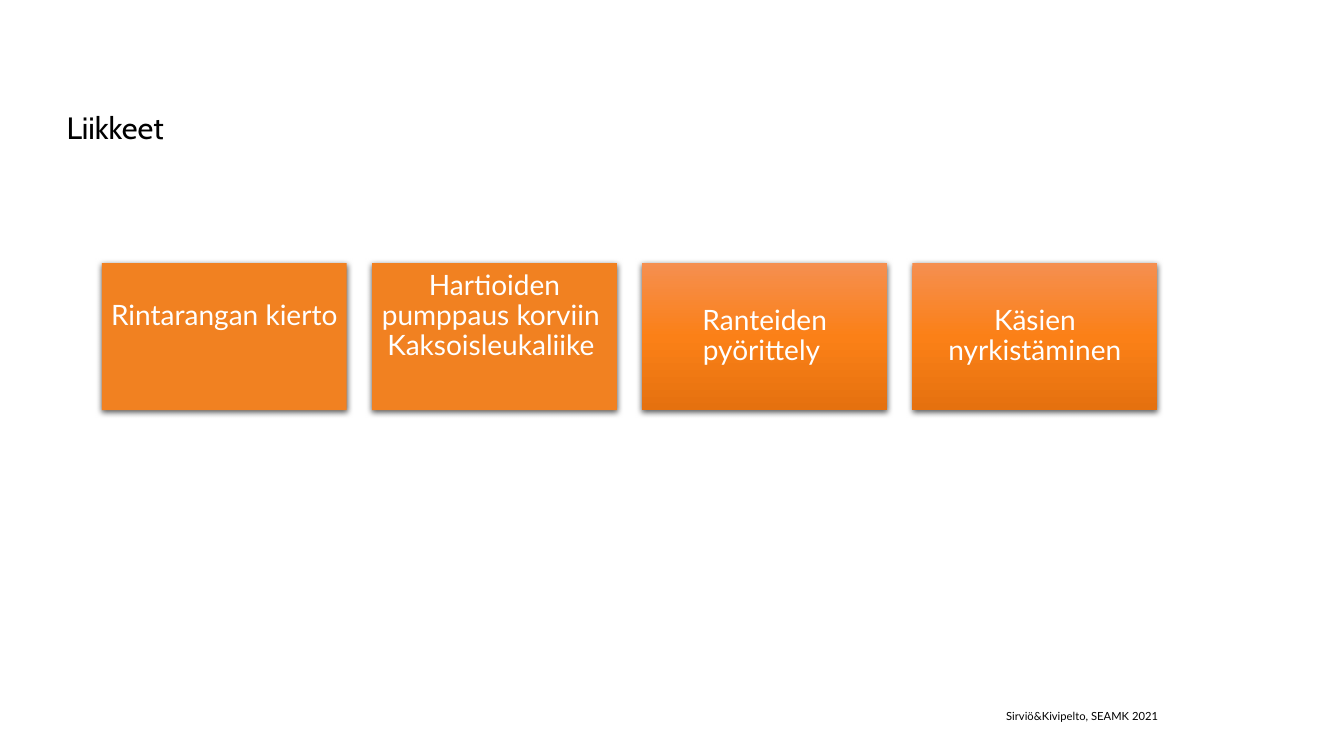
from dataclasses import dataclass

from lxml import etree
from pptx import Presentation
from pptx.dml.color import RGBColor
from pptx.enum.shapes import MSO_SHAPE
from pptx.enum.text import MSO_ANCHOR, PP_ALIGN
from pptx.oxml import parse_xml
from pptx.oxml.ns import nsdecls, qn
from pptx.util import Inches, Pt

RECT = MSO_SHAPE.RECTANGLE
TOP, MIDDLE = MSO_ANCHOR.TOP, MSO_ANCHOR.MIDDLE
LEFT, CENTER, RIGHT = PP_ALIGN.LEFT, PP_ALIGN.CENTER, PP_ALIGN.RIGHT


@dataclass(frozen=True)
class Theme:
    title_font: str = "Cabin"
    body_font: str = "Lato"
    title_size: int = 22
    card_size: int = 20
    footer_size: int = 8
    ink: str = "000000"
    card_text: str = "FFFFFF"
    card: str = "F18121"
    gradient: tuple = ((0, "F58F50"), (50, "FB8017"), (100, "E5710F"))


THEME = Theme()

# Text, gradient fill, bottom inset: a deeper inset lifts the text
CARDS = [
    ("Rintarangan kierto", False, 0.48),
    ("Hartioiden pumppaus korviin \vKaksoisleukaliike ", False, 0.48),
    ("Ranteiden pyörittely ", True, 0.08),
    ("Käsien nyrkistäminen", True, 0.08),
]


def set_text(sp, text, font, size, color, align, anchor, insets):
    """Fill a shape with one paragraph; insets are left, top, right, bottom."""
    tf = sp.text_frame
    tf.word_wrap = True
    tf.vertical_anchor = anchor
    (tf.margin_left, tf.margin_top,
     tf.margin_right, tf.margin_bottom) = map(Inches, insets)
    p = tf.paragraphs[0]
    p.text = text
    p.alignment = align
    p.font.name = font
    p.font.size = Pt(size)
    p.font.color.rgb = RGBColor.from_string(color)
    return p


def add_gradient(sp, stops):
    """Fill a shape with a gradient that runs from top to bottom."""
    gs = "".join(f'<a:gs pos="{pos * 1000}"><a:srgbClr val="{color}"/></a:gs>'
                 for pos, color in stops)
    fill = parse_xml(f'<a:gradFill {nsdecls("a")}><a:gsLst>{gs}</a:gsLst>'
                     '<a:lin ang="5400000" scaled="0"/></a:gradFill>')
    sp._element.spPr.find(qn("a:prstGeom")).addnext(fill)


def add_shadow(sp):
    """Give a shape a soft shadow below it."""
    sp.shadow.inherit = False
    effects = sp._element.spPr.find(qn("a:effectLst"))
    shadow = etree.SubElement(
        effects, qn("a:outerShdw"), blurRad=str(Pt(4.5)), dist=str(Pt(1.5)),
        dir="5400000", algn="ctr", rotWithShape="0")
    color = etree.SubElement(shadow, qn("a:srgbClr"), val=THEME.ink)
    etree.SubElement(color, qn("a:alpha"), val="63000")


def add_title(s, x, y, w, h):
    sp = s.shapes.add_textbox(*map(Inches, (x, y, w, h)))
    set_text(sp, "Liikkeet", THEME.title_font, THEME.title_size, THEME.ink,
             LEFT, TOP, (0, 0.74, 0, 0))


def add_card(s, x, y, w, h, text, graded, bottom):
    sp = s.shapes.add_shape(RECT, *map(Inches, (x, y, w, h)))
    if graded:
        add_gradient(sp, THEME.gradient)
    else:
        sp.fill.solid()
        sp.fill.fore_color.rgb = RGBColor.from_string(THEME.card)
    sp.line.fill.background()
    add_shadow(sp)
    p = set_text(sp, text, THEME.body_font, THEME.card_size, THEME.card_text,
                 CENTER, MIDDLE, (0.08, 0.08, 0.08, bottom))
    p.line_spacing = 0.9


def add_card_row(s, x, y, w, h, gap=0.25):
    card_w = (w - gap * (len(CARDS) - 1)) / len(CARDS)
    for i, card in enumerate(CARDS):
        add_card(s, x + i * (card_w + gap), y, card_w, h, *card)


def add_footer(s, x, y, w, h):
    sp = s.shapes.add_textbox(*map(Inches, (x, y, w, h)))
    set_text(sp, "Sirviö&Kivipelto, SEAMK 2021", THEME.body_font,
             THEME.footer_size, THEME.ink, RIGHT, MIDDLE, (0, 0, 0, 0))


def main():
    prs = Presentation()
    prs.slide_width, prs.slide_height = Inches(13.33), Inches(7.5)
    s = prs.slides.add_slide(prs.slide_layouts[6])
    add_title(s, 0.66, 0.52, 11.72, 1.21)
    add_footer(s, 6.99, 7, 4.5, 0.2)
    add_card_row(s, 1.01, 2.61, 10.47, 1.46)
    prs.save("out.pptx")


if __name__ == "__main__":
    main()
